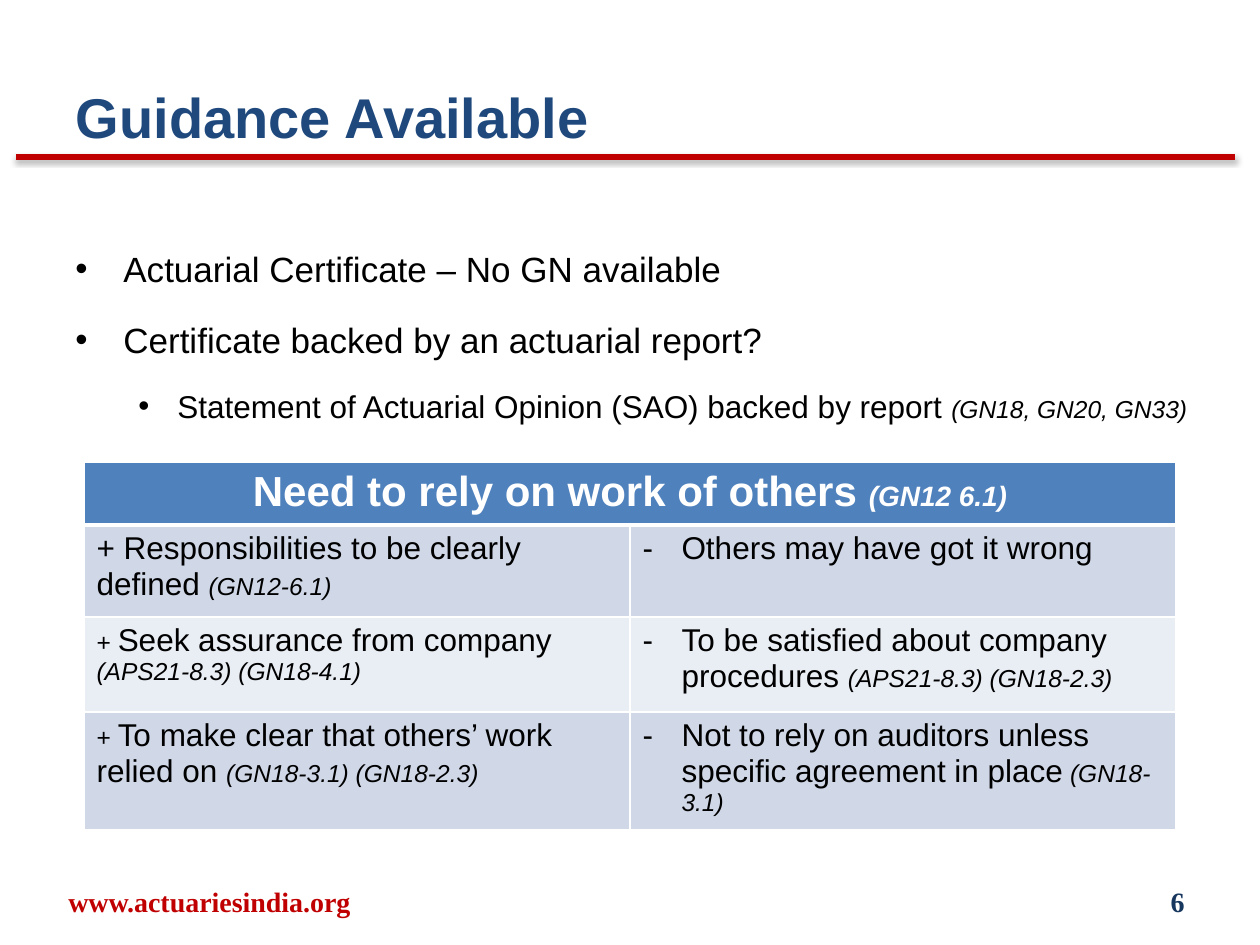
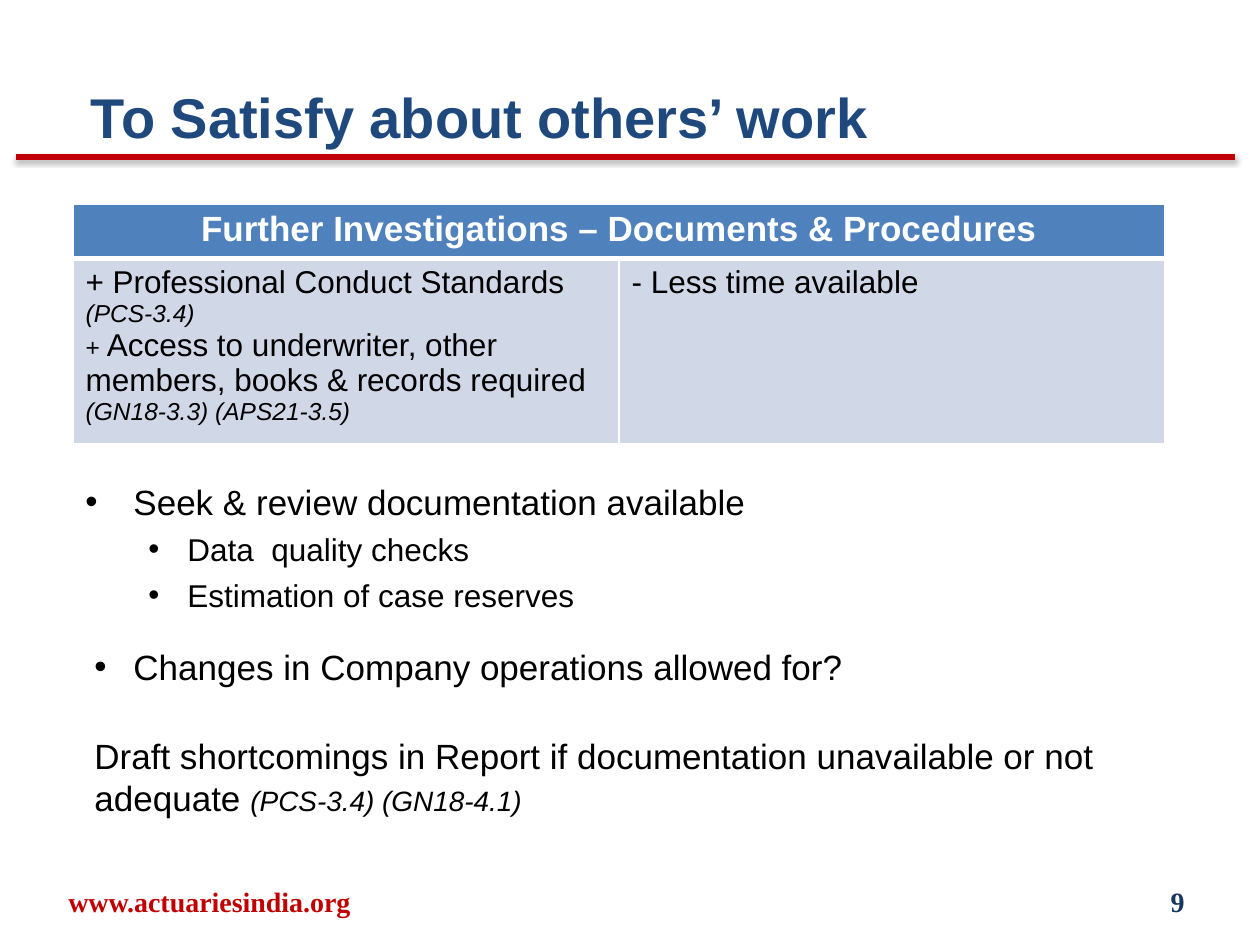
from pptx import Presentation
from pptx.dml.color import RGBColor
from pptx.enum.shapes import MSO_CONNECTOR
from pptx.enum.text import MSO_ANCHOR, PP_ALIGN
from pptx.oxml import parse_xml
from pptx.oxml.ns import nsdecls
from pptx.util import Emu, Pt

# Colours and fonts
RED = RGBColor(0xC0, 0x00, 0x00)
NAVY = RGBColor(0x1F, 0x49, 0x7D)
DARK_NAVY = RGBColor(0x17, 0x37, 0x5E)
BLACK = RGBColor(0x00, 0x00, 0x00)
WHITE = RGBColor(0xFF, 0xFF, 0xFF)
HEADER_BLUE = RGBColor(0x4F, 0x81, 0xBD)
BANDS = (RGBColor(0xD0, 0xD8, 0xE8), RGBColor(0xE9, 0xED, 0xF4))
SANS, SERIF = "Arial", "Times New Roman"

# Text formats
TITLE = dict(name=SANS, size=Pt(32), bold=True, color=NAVY)
SITE = dict(name=SERIF, size=Pt(16), bold=True, color=RED)
PAGE = dict(SITE, color=DARK_NAVY)
MAIN = dict(name=SANS, size=Pt(20), bold=False, color=BLACK)
SUB = dict(MAIN, size=Pt(18))
SMALL = dict(MAIN, size=Pt(14))
REF = dict(SMALL, italic=True)
BIG_REF = dict(REF, size=Pt(16))
HEAD = dict(MAIN, bold=True, color=WHITE)
BIG_HEAD = dict(HEAD, size=Pt(24))
HEAD_REF = dict(HEAD, size=Pt(16), italic=True)

# Paragraph layouts: left margin and first-line indent in px
BULLET = dict(margin=48, indent=-48, bullet="•")
SUB_BULLET = dict(margin=102, indent=-39, bullet="•", level=1)
NEAR_BULLET = dict(SUB_BULLET, margin=48)
PLAIN = dict(margin=9)
DASH = dict(margin=39, indent=-39, bullet="-")


def px(n):
    return Emu(round(n * 914400 / 126))


def add_run(p, text, style):
    r = p.add_run()
    r.text = text
    for key, value in style.items():
        if key == "color":
            r.font.color.rgb = value
        else:
            setattr(r.font, key, value)


def set_indent(p, margin=0, indent=0, bullet=None, level=0):
    pPr = p._p.get_or_add_pPr()
    pPr.set("marL", str(px(margin)))
    pPr.set("indent", str(px(indent)))
    if bullet:
        pPr.append(parse_xml(f'<a:buFont {nsdecls("a")} typeface="{SANS}"/>'))
        pPr.append(parse_xml(f'<a:buChar {nsdecls("a")} char="{bullet}"/>'))
    p.level = level


def fill_text(tf, paragraphs, **formats):
    """Write paragraphs given as (layout, runs, formats of its own)."""
    for i, (layout, runs, own) in enumerate(paragraphs):
        p = tf.paragraphs[0] if i == 0 else tf.add_paragraph()
        set_indent(p, **layout)
        for key, value in {**formats, **own}.items():
            if i or key != "space_before":
                setattr(p, key, value)
        for text, style in runs:
            add_run(p, text, style)


def add_text(s, box, paragraphs, anchor=MSO_ANCHOR.TOP, **formats):
    tf = s.shapes.add_textbox(*map(px, box)).text_frame
    tf.word_wrap = True
    tf.vertical_anchor = anchor
    fill_text(tf, paragraphs, **formats)


def add_rule(s):
    rule = s.shapes.add_connector(MSO_CONNECTOR.STRAIGHT, px(16), px(157), px(1235), px(157))
    rule.line.color.rgb = RED
    rule.line.width = Pt(3)
    rule._element.spPr.append(parse_xml(
        f'<a:effectLst {nsdecls("a")}><a:outerShdw blurRad="39400" dist="20300" dir="5400000"'
        ' rotWithShape="0"><a:srgbClr val="000000"><a:alpha val="38000"/></a:srgbClr>'
        '</a:outerShdw></a:effectLst>'))


def add_slide(prs, title, page, inset=13):
    """Title, red rule and footer shared by the slides."""
    s = prs.slides.add_slide(prs.slide_layouts[5])
    add_rule(s)
    sp = s.shapes.title
    sp.left, sp.top, sp.width, sp.height = map(px, (63, 38, 1134, 157))
    tf = sp.text_frame
    tf.vertical_anchor = MSO_ANCHOR.MIDDLE
    tf.margin_left = px(inset)
    fill_text(tf, [({}, [(title, TITLE)], {})], alignment=PP_ALIGN.LEFT)
    footer = (((10, 876, 399, 50), "www.actuariesindia.org", SITE, PP_ALIGN.CENTER),
              ((903, 876, 294, 50), page, PAGE, PP_ALIGN.RIGHT))
    for box, text, style, align in footer:
        add_text(s, box, [({}, [(text, style)], {})], MSO_ANCHOR.MIDDLE, alignment=align)
    return s


def style_cell(cell, fill, bottom=1):
    tcPr = cell._tc.get_or_add_tcPr()
    for side, width in (("L", 1), ("R", 1), ("T", 1), ("B", bottom)):
        tcPr.append(parse_xml(
            f'<a:ln{side} {nsdecls("a")} w="{Pt(width)}"><a:solidFill>'
            f'<a:srgbClr val="{WHITE}"/></a:solidFill></a:ln{side}>'))
    cell.fill.solid()
    cell.fill.fore_color.rgb = fill


def add_grid(s, left, top, heights, header, rows):
    """Two-column table under one merged header; each cell is a paragraph list."""
    table = s.shapes.add_table(len(rows) + 1, 2, px(left), px(top),
                               px(1092), px(sum(heights))).table
    table.horz_banding = False
    for row, height in zip(table.rows, heights):
        row.height = px(height)
    for col in table.columns:
        col.width = px(546)
    for c in range(2):
        style_cell(table.cell(0, c), HEADER_BLUE, bottom=3)
    table.cell(0, 0).merge(table.cell(0, 1))
    fill_text(table.cell(0, 0).text_frame, [({}, header, {})], alignment=PP_ALIGN.CENTER)
    for i, row in enumerate(rows):
        for c, paragraphs in enumerate(row):
            cell = table.cell(i + 1, c)
            style_cell(cell, BANDS[i % 2])
            fill_text(cell.text_frame, paragraphs)


def guidance_slide(prs):
    s = add_slide(prs, "Guidance Available", "6")
    add_text(s, (63, 220, 1144, 230), [
        (BULLET, [("Actuarial Certificate – No GN available", MAIN)], {}),
        (BULLET, [("Certificate backed by an actuarial report?", MAIN)], {}),
        (SUB_BULLET, [("Statement of Actuarial Opinion (SAO) backed by report ", SUB),
                      ("(GN18, GN20, GN33)", REF)], {}),
    ], line_spacing=1.5, space_before=Pt(4.5))
    rows = [
        ([("+ Responsibilities to be clearly defined ", SUB), ("(GN12-6.1)", REF)],
         [("Others may have got it wrong", SUB)]),
        ([("+ ", SMALL), ("Seek assurance from company ", SUB),
          ("(APS21-8.3) (GN18-4.1)", REF)],
         [("To be satisfied about company procedures ", SUB),
          ("(APS21-8.3) (GN18-2.3)", REF)]),
        ([("+ ", SMALL), ("To make clear that others’ work relied on ", SUB),
          ("(GN18-3.1) (GN18-2.3)", REF)],
         [("Not to rely on auditors unless specific agreement in place", SUB),
          (" ", SMALL), ("(GN18-3.1)", REF)]),
    ]
    add_grid(s, 84, 462, (58, 92, 95, 110),
             [("Need to rely on work of others ", BIG_HEAD), ("(GN12 6.1)", HEAD_REF)],
             [([({}, plus, {})], [(DASH, minus, {})]) for plus, minus in rows])


def others_work_slide(prs):
    s = add_slide(prs, "To Satisfy about others’ work", "9", inset=28)
    add_grid(s, 73, 204, (52, 173),
             [("Further Investigations – Documents & Procedures", HEAD)],
             [([({}, [("+ Professional Conduct Standards ", SUB), ("(PCS-3.4)", REF)], {}),
                ({}, [("+ ", SMALL),
                      ("Access to underwriter, other members, books & records required ", SUB),
                      ("(GN18-3.3) (APS21-3.5)", REF)], {})],
               [({}, [("- Less time available", SUB)], {})])])
    add_text(s, (73, 474, 1113, 390), [
        (BULLET, [("Seek & review documentation available", MAIN)], {}),
        (SUB_BULLET, [("Data  quality checks", SUB)], {}),
        (SUB_BULLET, [("Estimation of case reserves", SUB)], {}),
        (NEAR_BULLET, [("Changes in Company operations allowed for?", MAIN)],
         dict(space_before=Pt(18))),
        (PLAIN, [("Draft shortcomings in Report if documentation unavailable or not adequate ",
                  MAIN), ("(PCS-3.4) (GN18-4.1)", BIG_REF)], dict(space_before=Pt(27))),
    ], space_before=Pt(4.5))


def main():
    prs = Presentation()
    prs.slide_width, prs.slide_height = px(1260), px(945)
    guidance_slide(prs)
    others_work_slide(prs)
    prs.save("out.pptx")


if __name__ == "__main__":
    main()
